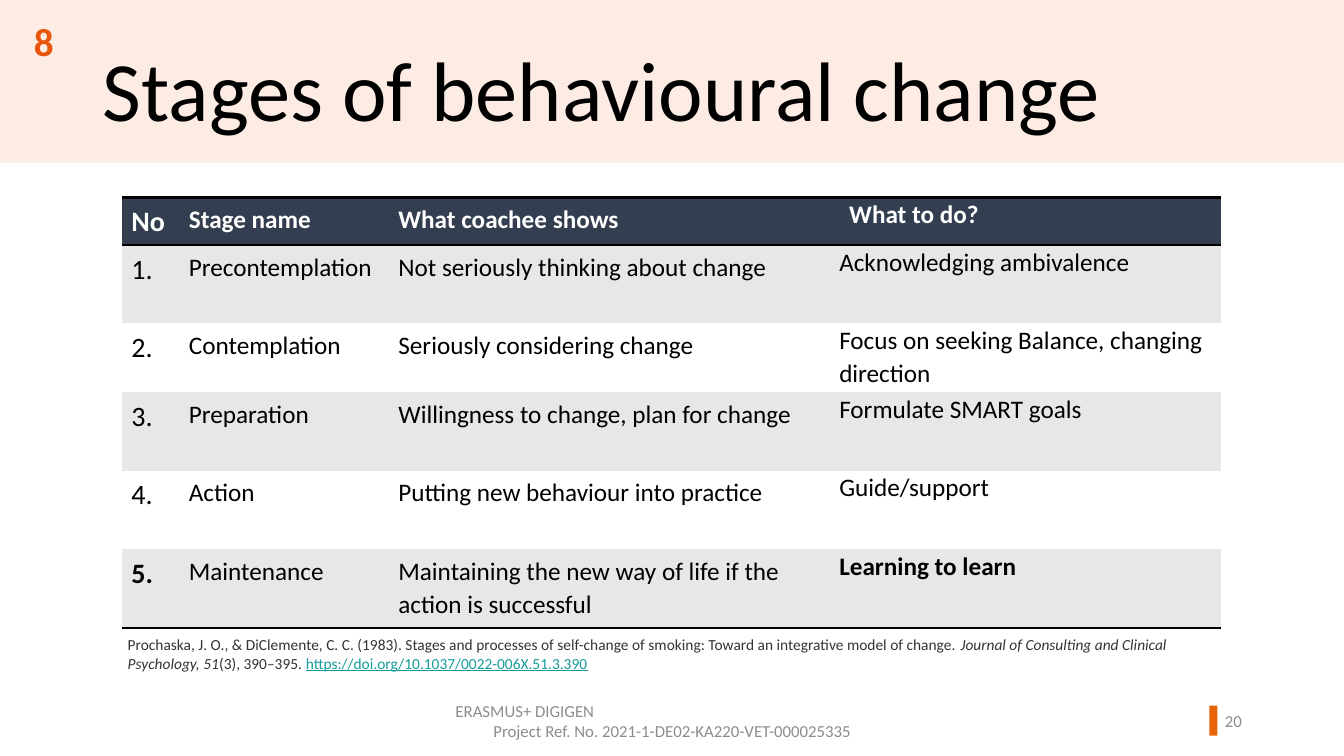
from lxml import etree
from pptx import Presentation
from pptx.dml.color import RGBColor
from pptx.enum.shapes import MSO_SHAPE
from pptx.enum.text import MSO_ANCHOR, PP_ALIGN
from pptx.oxml.ns import qn
from pptx.util import Cm, Pt

RECT = MSO_SHAPE.RECTANGLE
TOP, MIDDLE = MSO_ANCHOR.TOP, MSO_ANCHOR.MIDDLE
LEFT, CENTER, RIGHT = PP_ALIGN.LEFT, PP_ALIGN.CENTER, PP_ALIGN.RIGHT
FONT = "Calibri"
BLACK, WHITE, GREY, NAVY, STRIPE = "000000", "FFFFFF", "8C8C8C", "333F50", "E7E7E7"
PLAIN = "{2D5ABB26-0587-4C30-8999-92F81FD0307C}"  # table style without grid

# Content
TITLE = "Stages of behavioural change"
HEAD = ("No", "Stage name", "What coachee shows", "What to do?")
STAGES = [
    ("Precontemplation", "Not seriously thinking about change",
     "Acknowledging ambivalence"),
    ("Contemplation", "Seriously considering change",
     "Focus on seeking Balance, changing direction"),
    ("Preparation", "Willingness to change, plan for change",
     "Formulate SMART goals"),
    ("Action", "Putting new behaviour into practice", "Guide/support"),
    ("Maintenance", "Maintaining the new way of life if the action is successful",
     "Learning to learn"),
]
ROWS = [HEAD] + [(f"{n}.", *stage) for n, stage in enumerate(STAGES, 1)]
BOLD = {"5.", "Learning to learn", *HEAD}
WIDTHS = (1.45, 5.28, 11.35, 9.63)
HEIGHTS = (1.19, 1.98, 1.73, 1.98, 1.98, 1.98)
SOURCE = [  # text, colour, italic, underline
    ("Prochaska, J. O., & DiClemente, C. C. (1983). Stages and processes of "
     "self-change of smoking: Toward an integrative model of change.\u00a0",
     "333333", False, False),
    ("Journal of Consulting and Clinical Psychology, 51", "333333", True, False),
    ("(3), 390–395.\u00a0", "333333", False, False),
    ("https://doi.org/10.1037/0022-006X.51.3.390", "149C99", False, True),
]
FOOTER = [("ERASMUS+ DIGIGEN", LEFT),
          ("Project Ref. No. 2021-1-DE02-KA220-VET-000025335", CENTER)]


def color(code):
    return RGBColor.from_string(code)


def style(font, size, code, bold=False):
    font.name, font.size, font.bold = FONT, Pt(size), bold
    font.color.rgb = color(code)


def add_bar(x, y, w, h, code):
    bar = slide.shapes.add_shape(RECT, Cm(x), Cm(y), Cm(w), Cm(h))
    bar.shadow.inherit = False
    bar.fill.solid()
    bar.fill.fore_color.rgb = color(code)
    bar.line.fill.background()


def add_text(x, y, w, h, lines, size, code, bold=False, anchor=TOP):
    frame = slide.shapes.add_textbox(Cm(x), Cm(y), Cm(w), Cm(h)).text_frame
    frame.word_wrap = True
    frame.vertical_anchor = anchor
    frame.text = "\n".join(text for text, _ in lines)
    for para, (_, align) in zip(frame.paragraphs, lines):
        para.alignment = align
        for run in para.runs:
            style(run.font, size, code, bold)
    return frame


def add_rule(cell, side):
    line = etree.Element(qn(f"a:{side}"), w=str(Pt(2)))
    fill = etree.SubElement(line, qn("a:solidFill"))
    etree.SubElement(fill, qn("a:srgbClr"), val=BLACK)
    cell._tc.get_or_add_tcPr().insert(0, line)


deck = Presentation()
deck.slide_width, deck.slide_height = Cm(33.87), Cm(19.05)
slide = deck.slides.add_slide(deck.slide_layouts[5])

# Title on its band
add_bar(0, 0, 33.87, 4.1, "FDECE3")
title = slide.shapes.title
slide.shapes._spTree.append(title._element)
title.left, title.top, title.width, title.height = Cm(2.34), Cm(1.1), Cm(27.15), Cm(2.16)
title.text_frame.text = TITLE
title.text_frame.vertical_anchor = TOP
para = title.text_frame.paragraphs[0]
para.alignment, para.line_spacing = LEFT, 0.9
style(para.runs[0].font, 60.3, BLACK)
add_text(0.23, 0.3, 1.75, 1.45, [("8", CENTER)], 28, "E9550D", True)

# Table of stages
frame = slide.shapes.add_table(len(ROWS), len(HEAD), Cm(3.07), Cm(4.98),
                               Cm(sum(WIDTHS)), Cm(sum(HEIGHTS)))
table = frame.table
table.first_row = table.horz_banding = False
table._tbl.tblPr.find(qn("a:tableStyleId")).text = PLAIN
for col, width in zip(table.columns, WIDTHS):
    col.width = Cm(width)
for row, height in zip(table.rows, HEIGHTS):
    row.height = Cm(height)
for r, texts in enumerate(ROWS):
    for c, text in enumerate(texts):
        cell = table.cell(r, c)
        last = c == len(HEAD) - 1
        cell.margin_left = cell.margin_right = Cm(0 if last else 0.24)
        cell.margin_top = cell.margin_bottom = Cm(0 if last else 0.13)
        if last and r == 0:
            cell.margin_left = Cm(0.25)
        cell.text = text
        para = cell.text_frame.paragraphs[0]
        para.line_spacing, para.space_after = 1.07, Pt(8)
        style(para.runs[0].font, 18 if c else 20, BLACK if r else WHITE, text in BOLD)
        cell.fill.solid()
        cell.fill.fore_color.rgb = color(NAVY if r == 0 else STRIPE if r % 2 else WHITE)
        if r in (0, len(ROWS) - 1):
            add_rule(cell, "lnB")
        if r == 0:
            add_rule(cell, "lnT")

# Source
para = add_text(2.97, 15.88, 27.84, 1.19, [("", LEFT)], 11, BLACK).paragraphs[0]
for text, code, italic, under in SOURCE:
    run = para.add_run()
    run.text = text
    style(run.font, 11, code)
    run.font.italic, run.font.underline = italic, under

# Footer
add_text(11.23, 17.65, 11.43, 1.02, FOOTER, 12, GREY, anchor=MIDDLE)
add_bar(30.48, 17.78, 0.2, 0.76, "E86507")
add_text(29.9, 17.65, 1.65, 1.02, [("20", RIGHT)], 12, GREY, anchor=MIDDLE)

deck.save("out.pptx")
